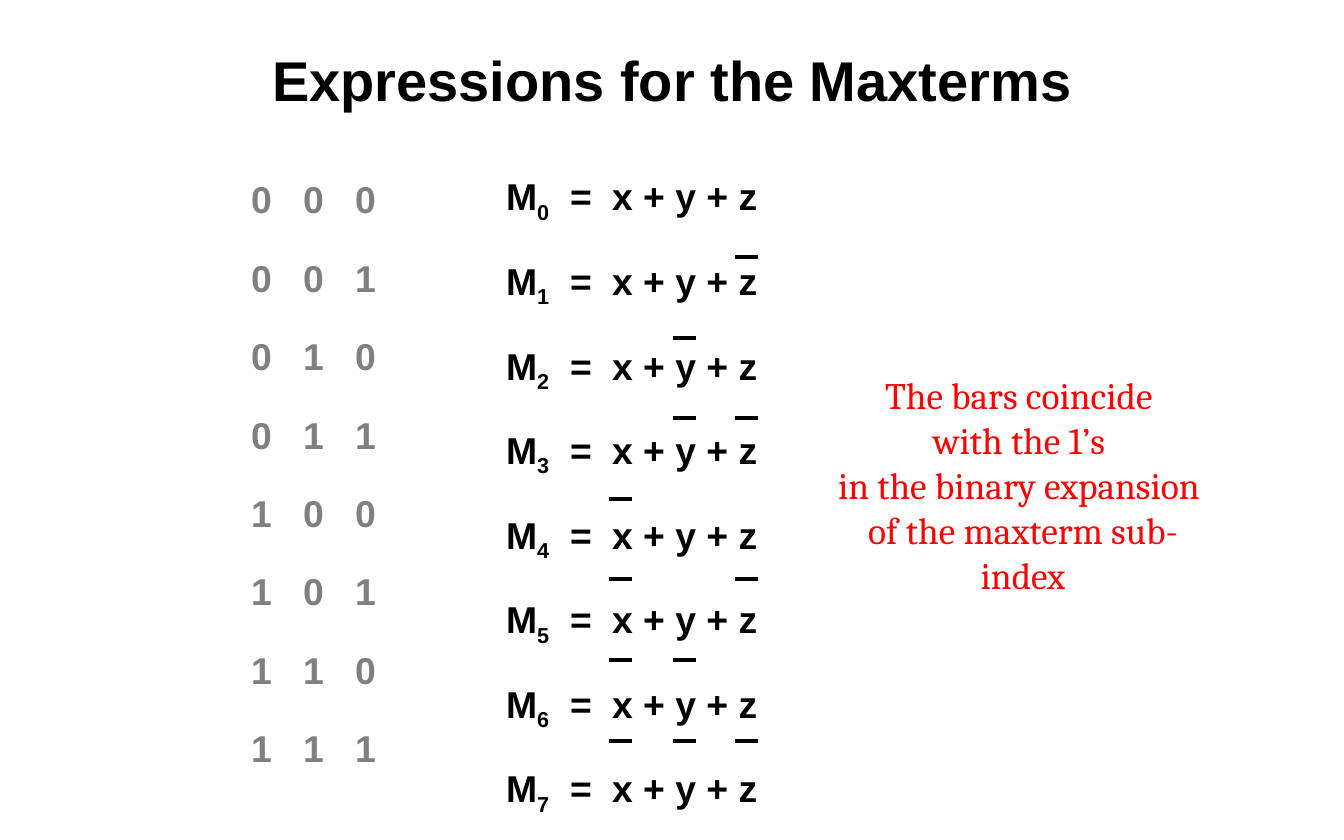
from lxml import etree
from pptx import Presentation
from pptx import util as u
from pptx.dml.color import RGBColor
from pptx.enum import shapes, text
from pptx.oxml.ns import qn

PX = 914400 // 112
BLACK, GRAY, RED = "000000", "808080", "FF0000"


def rgb(color):
    return RGBColor.from_string(color)


def add_text(box, lines, font, align, gap=0, tabs=()):
    frame = slide.shapes.add_textbox(*(n * PX for n in box)).text_frame
    frame.word_wrap = True
    for i, pieces in enumerate(lines):
        line = frame.paragraphs[0] if i == 0 else frame.add_paragraph()
        line.alignment = align
        line.space_after = u.Pt(gap)
        if tabs:
            stops = etree.SubElement(line._p.get_or_add_pPr(), qn("a:tabLst"))
            for stop in tabs:
                etree.SubElement(stops, qn("a:tab"), pos=str(stop * PX), algn="l")
        for content, baseline in pieces:
            run = line.add_run()
            run.text = content
            for key, value in font.items():
                if key == "color":
                    run.font.color.rgb = rgb(value)
                else:
                    setattr(run.font, key, value)
            if baseline:
                run._r.get_or_add_rPr().set("baseline", str(baseline))
    return frame


deck = Presentation()
deck.slide_width, deck.slide_height = 1344 * PX, 840 * PX
slide = deck.slides.add_slide(deck.slide_layouts[6])

left, center = text.PP_ALIGN.LEFT, text.PP_ALIGN.CENTER
term_font = {"name": "Arial", "size": u.Pt(24), "bold": True, "color": BLACK}
row_gap = 21.6

title = add_text((0, 37, 1344, 84), [[("Expressions for the Maxterms", 0)]],
                 {**term_font, "size": u.Pt(36)}, center)
title.vertical_anchor = text.MSO_ANCHOR.MIDDLE

indices = range(8)
maxterms = [[("M", 0), (str(i), -25000), ("\t=\tx + y + z", 0)] for i in indices]
add_text((495, 168, 355, 653), maxterms, term_font, left, row_gap, (64, 106))

bar_lefts = (609, 673, 735)
for i in indices:
    for bit, bar_left in zip(f"{i:03b}", bar_lefts):
        if bit == "1":
            y = round(257 + (i - 1) * 80.6) * PX
            bar = slide.shapes.add_connector(
                shapes.MSO_CONNECTOR.STRAIGHT, bar_left * PX, y, (bar_left + 23) * PX, y)
            bar.line.color.rgb = rgb(BLACK)
            bar.line.width = u.Pt(3)
            etree.SubElement(bar._element.spPr, qn("a:effectLst"))

binary_rows = [[("\t".join(f"{i:03b}"), 0)] for i in indices]
add_text((240, 171, 228, 653), binary_rows, {**term_font, "color": GRAY}, left, row_gap, (52, 104))

remark = ("The bars coincide ", "with the 1’s ", "in the binary expansion ",
          "of the maxterm sub-index")
add_text((818, 367, 410, 193), [[(line, 0)] for line in remark],
         {"name": "Cambria", "size": u.Pt(24), "color": RED}, center)

deck.save("out.pptx")
